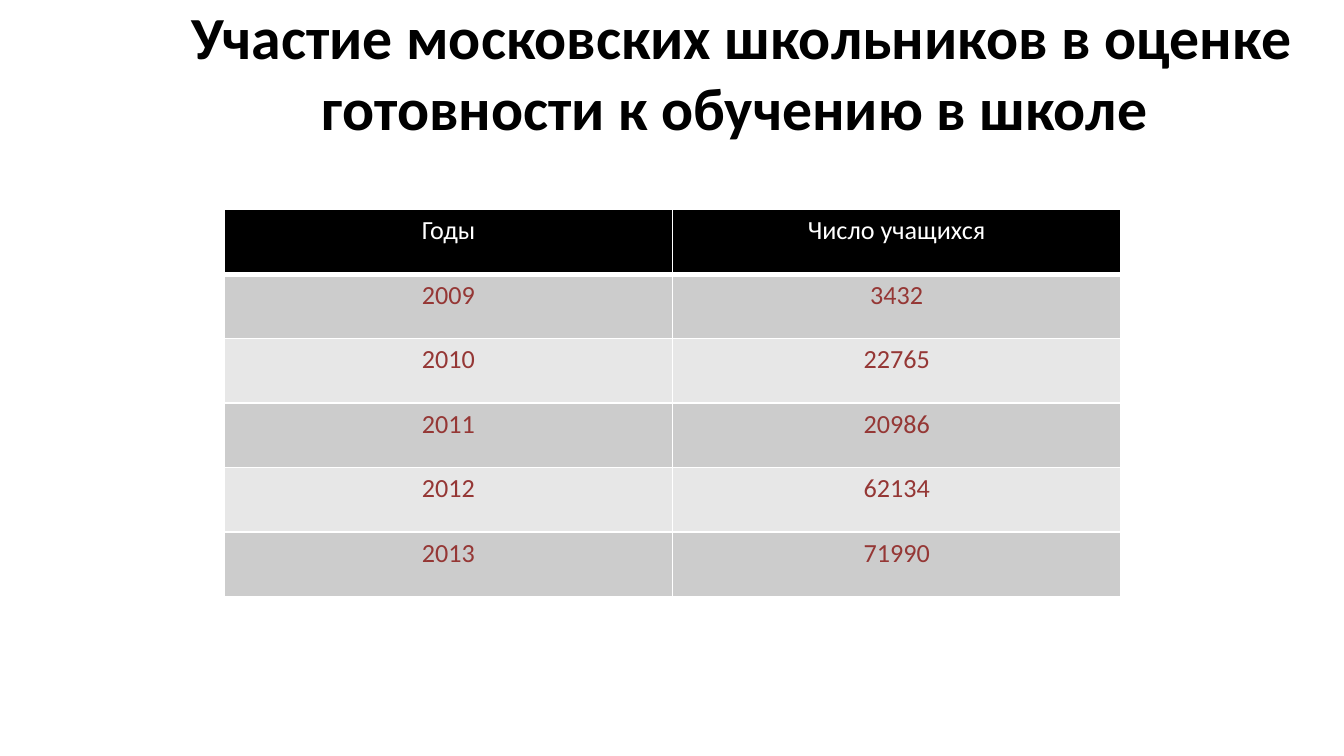
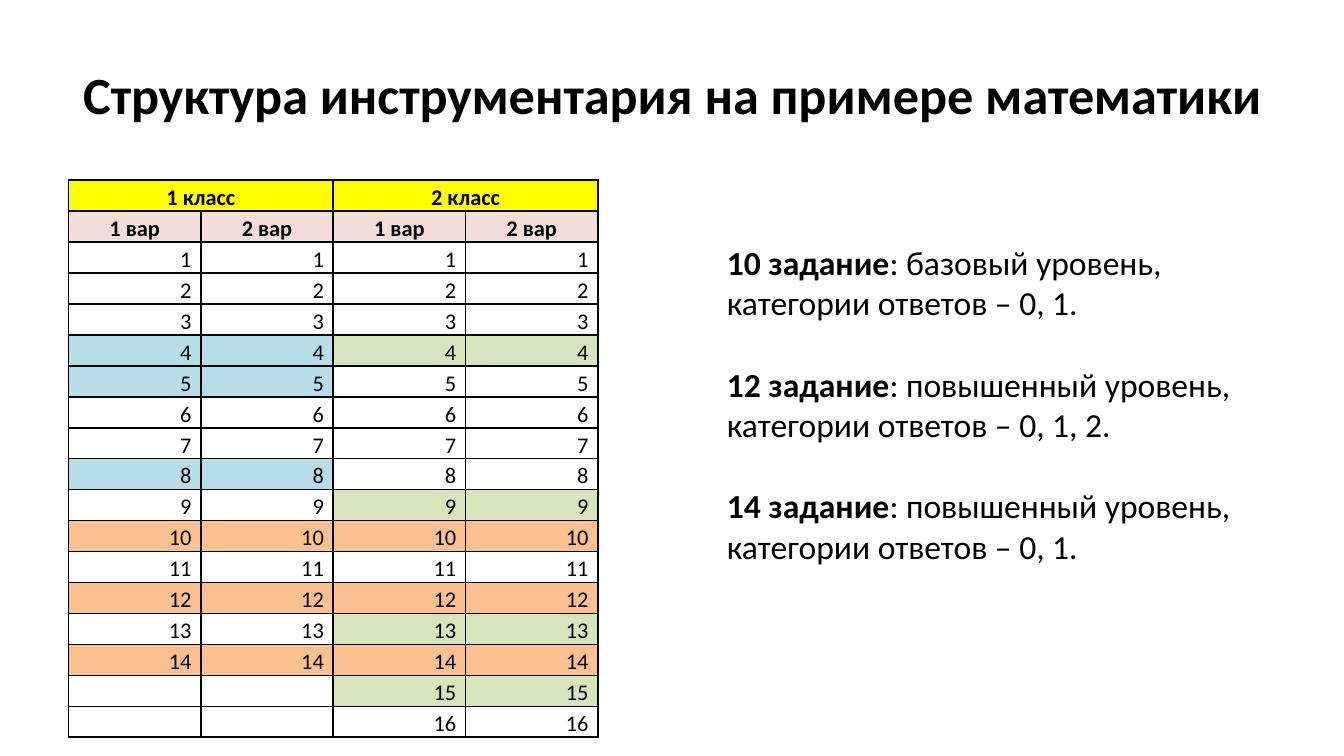
from lxml import etree
from pptx import Presentation
from pptx import util as u
from pptx.dml.color import RGBColor
from pptx.enum import text
from pptx.oxml import ns

FONT = "Calibri"
BLACK = RGBColor(0x00, 0x00, 0x00)
WHITE = RGBColor(0xFF, 0xFF, 0xFF)
DARK_RED = RGBColor(0x95, 0x37, 0x35)
GREY = RGBColor(0xCC, 0xCC, 0xCC)
LIGHT_GREY = RGBColor(0xE7, 0xE7, 0xE7)
YELLOW = RGBColor(0xFF, 0xFF, 0x00)
PINK = RGBColor(0xF2, 0xDD, 0xDC)
BLUE = RGBColor(0xB6, 0xDD, 0xE8)
GREEN = RGBColor(0xD7, 0xE4, 0xBC)
ORANGE = RGBColor(0xFA, 0xC0, 0x90)

COLUMNS, ROWS = 100, 56.25
LEFT, CENTER, RIGHT = (text.PP_ALIGN.LEFT, text.PP_ALIGN.CENTER,
                       text.PP_ALIGN.RIGHT)
TOP, MIDDLE, BOTTOM = (text.MSO_ANCHOR.TOP, text.MSO_ANCHOR.MIDDLE,
                       text.MSO_ANCHOR.BOTTOM)

PARTICIPATION = [("Годы", "Число учащихся"), ("2009", "3432"),
                 ("2010", "22765"), ("2011", "20986"),
                 ("2012", "62134"), ("2013", "71990")]
FIRST_GRADE_TASKS, SECOND_GRADE_TASKS = 14, 16
COMMON_TASKS = {10, 12, 14}
FIRST_GRADE_MARKED = {4, 5, 8}
SECOND_GRADE_MARKED = {4, 9, 13, 15}
TASK_LEVELS = [
    ("10 задание", ": базовый уровень,", "категории ответов – 0, 1."),
    ("12 задание", ": повышенный уровень,", "категории ответов – 0, 1, 2."),
    ("14 задание", ": повышенный уровень,", "категории ответов – 0, 1."),
]


def write_text(frame, paragraphs, size, color=BLACK, bold=False, align=LEFT,
               line_spacing=None, gap=0, gap_every=1):
    """Each paragraph is a list of (text, bold) runs or a plain string."""
    for index, runs in enumerate(paragraphs):
        paragraph = frame.add_paragraph() if index else frame.paragraphs[0]
        paragraph.alignment = align
        if line_spacing:
            paragraph.line_spacing = line_spacing
        if gap and index and index % gap_every == 0:
            paragraph.space_before = u.Pt(gap)
        if not runs:
            end = etree.SubElement(paragraph._p, ns.qn("a:endParaRPr"))
            end.set("sz", str(size * 100))
            continue
        for content, is_bold in [(runs, bold)] if isinstance(runs, str) else runs:
            run = paragraph.add_run()
            run.text = content
            run.font.name, run.font.size = FONT, u.Pt(size)
            run.font.bold = is_bold
            run.font.color.rgb = color


def set_borders(cell, color, bottom_width=1):
    properties = cell._tc.get_or_add_tcPr()
    for index, side in enumerate("LRTB"):
        width = bottom_width if side == "B" else 1
        line = etree.Element(ns.qn(f"a:ln{side}"), w=str(u.Pt(width)))
        fill = etree.SubElement(line, ns.qn("a:solidFill"))
        etree.SubElement(fill, ns.qn("a:srgbClr"), val=str(color))
        properties.insert(index, line)


class Deck:
    def __init__(self):
        self.presentation = Presentation()
        self.presentation.slide_width = u.Inches(10)
        self.presentation.slide_height = u.Inches(5.625)
        self.slide = None

    def box(self, left, top, width, height):
        """Turn grid columns and rows into slide lengths."""
        column = self.presentation.slide_width / COLUMNS
        row = self.presentation.slide_height / ROWS
        return [int(length) for length in (left * column, top * row,
                                           width * column, height * row)]

    def new_slide(self):
        self.slide = self.presentation.slides.add_slide(
            self.presentation.slide_layouts[6])

    def text_box(self, area, paragraphs, anchor=TOP, wrap=True, **style):
        frame = self.slide.shapes.add_textbox(*self.box(*area)).text_frame
        frame.word_wrap = wrap
        frame.vertical_anchor = anchor
        write_text(frame, paragraphs, **style)

    def title(self, area, content, size):
        self.text_box(area, [content], MIDDLE, size=size, bold=True,
                      align=CENTER)

    def table(self, area, rows, cell_style, border, margins, anchor=TOP,
              header_rule=1):
        """cell_style(row, column) gives the fill and the text format."""
        left, top, width, height = self.box(*area)
        table = self.slide.shapes.add_table(
            len(rows), len(rows[0]), left, top, width, height).table
        table.horz_banding = False
        for row_index, row in enumerate(rows):
            for column_index, content in enumerate(row):
                cell = table.cell(row_index, column_index)
                fill, style = cell_style(row_index, column_index)
                if fill is None:
                    cell.fill.background()
                else:
                    cell.fill.solid()
                    cell.fill.fore_color.rgb = fill
                side, edge = map(u.Inches, margins)
                cell.margin_left = cell.margin_right = side
                cell.margin_top = cell.margin_bottom = edge
                cell.vertical_anchor = anchor
                set_borders(cell, border, 1 if row_index else header_rule)
                write_text(cell.text_frame, [content], **style)
        return table


def participation_style(row, column):
    if row == 0:
        return BLACK, dict(size=14, color=WHITE, align=CENTER)
    fill = GREY if row % 2 else LIGHT_GREY
    return fill, dict(size=14, color=DARK_RED, align=CENTER)


def task_style(row, column):
    task = row - 1
    heading = row < 2
    style = dict(size=12, bold=heading, align=CENTER if heading else RIGHT,
                 line_spacing=1.15)
    if heading:
        return (YELLOW, PINK)[row], style
    if task in COMMON_TASKS:
        return ORANGE, style
    if column < 2:
        return (BLUE if task in FIRST_GRADE_MARKED else None), style
    return (GREEN if task in SECOND_GRADE_MARKED else None), style


def participation_slide(deck):
    deck.new_slide()
    deck.title((12.6, 1.8, 85.2, 7), "Участие московских школьников в оценке "
               "готовности к обучению в школе ", 32)
    deck.table((16.7, 15.6, 66.7, 28.8), PARTICIPATION, participation_style,
               WHITE, margins=(0.1, 0.04), header_rule=3)


def structure_slide(deck):
    deck.new_slide()
    deck.title((5, 2.3, 90, 9.4),
               "Структура инструментария на примере математики", 28)
    rows = [("1 класс", "", "2 класс", ""), ("1 вар", "2 вар") * 2]
    for task in range(1, SECOND_GRADE_TASKS + 1):
        first = str(task) if task <= FIRST_GRADE_TASKS else ""
        rows.append((first, first, str(task), str(task)))
    table = deck.table((5.1, 13.4, 39.4, 41.4), rows, task_style, BLACK,
                       margins=(0.07, 0), anchor=BOTTOM)
    for column in (0, 2):
        table.cell(0, column).merge(table.cell(0, column + 1))
    lines = []
    for task, level, categories in TASK_LEVELS:
        lines += [[(task, True), (level, False)], categories]
    deck.text_box((53.1, 17.5, 39.9, 25.2), lines, wrap=False, size=18,
                  gap=22, gap_every=2)


def main():
    deck = Deck()
    participation_slide(deck)
    structure_slide(deck)
    deck.presentation.save("out.pptx")


if __name__ == "__main__":
    main()
